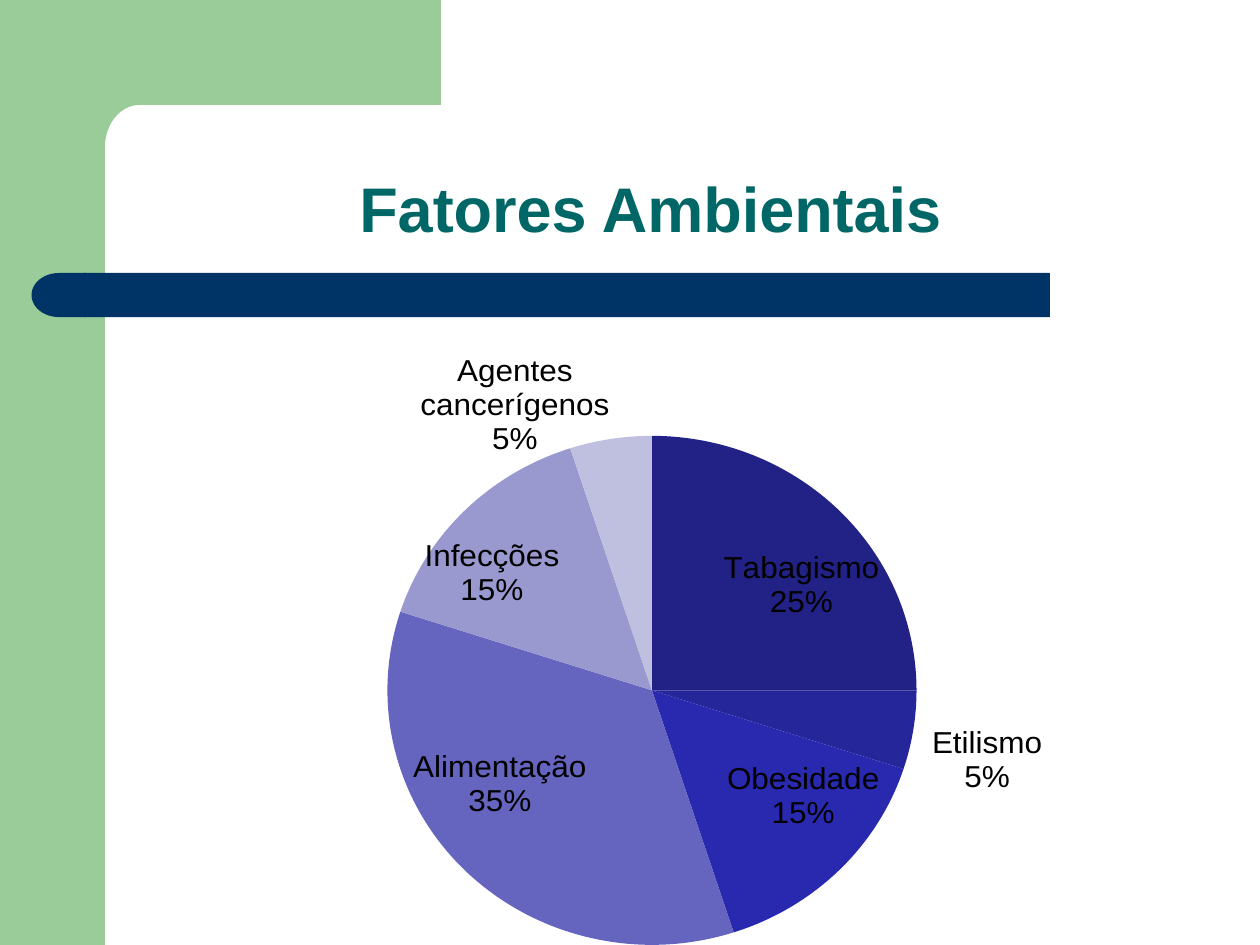
import math
from dataclasses import dataclass

from lxml import etree
from pptx import Presentation
from pptx import util as u
from pptx.chart import data as chart_data
from pptx.dml.color import RGBColor
from pptx.enum import chart as charts, shapes, text
from pptx.oxml import ns, parse_xml

INSIDE = charts.XL_LABEL_POSITION.INSIDE_END
OUTSIDE = charts.XL_LABEL_POSITION.OUTSIDE_END


@dataclass(frozen=True)
class Theme:
    font: str = "Arial"
    title_size: int = 36
    label_size: int = 18
    title: str = "006666"
    label: str = "000000"
    frame: str = "99CC99"
    bar: str = "003366"
    slices: tuple = ("222286", "26269B", "2929B0", "6565C0", "9999D0", "BFBFDF")


@dataclass(frozen=True)
class Factor:
    name: str
    share: int
    label_position: object
    label_shift: tuple


class SlideBuilder:
    COLUMNS, ROWS = 120, 90

    def __init__(self, deck, theme):
        self.deck, self.theme = deck, theme
        self.slide = deck.slides.add_slide(deck.slide_layouts[5])

    def point(self, column, row):
        return (round(self.deck.slide_width * column / self.COLUMNS),
                round(self.deck.slide_height * row / self.ROWS))

    def box(self, column, row, columns, rows):
        return (*self.point(column, row), *self.point(columns, rows))

    def paint(self, shape, color):
        shape.shadow.inherit = False
        shape.fill.solid()
        shape.fill.fore_color.rgb = RGBColor.from_string(color)
        shape.line.fill.background()

    def block(self, kind, area, color, rotation=0):
        shape = self.slide.shapes.add_shape(kind, *self.box(*area))
        shape.rotation = rotation
        self.paint(shape, color)

    def outline(self, corners, color):
        start, *rest = [self.point(*corner) for corner in corners]
        builder = self.slide.shapes.build_freeform(*start)
        builder.add_line_segments(rest)
        self.paint(builder.convert_to_shape(), color)

    def font(self, font, size, color, bold=False):
        font.name = self.theme.font
        font.size = u.Pt(size)
        font.bold = bold
        font.color.rgb = RGBColor.from_string(color)

    def title(self, wording, area):
        heading = self.slide.shapes.title
        heading.left, heading.top, heading.width, heading.height = self.box(*area)
        frame = heading.text_frame
        frame.vertical_anchor = text.MSO_ANCHOR.BOTTOM
        paragraph = frame.paragraphs[0]
        paragraph.alignment = text.PP_ALIGN.CENTER
        paragraph.line_spacing = 0.9
        run = paragraph.add_run()
        run.text = wording
        self.font(run.font, self.theme.title_size, self.theme.title, bold=True)

    def pie(self, factors, area, plot_area):
        data = chart_data.CategoryChartData()
        data.categories = [factor.name for factor in factors]
        data.add_series("Series 1", [factor.share for factor in factors])
        chart = self.slide.shapes.add_chart(
            charts.XL_CHART_TYPE.PIE, *self.box(*area), data).chart
        chart.has_legend = chart.has_title = False
        self.font(chart.font, self.theme.label_size, self.theme.label)
        plot = chart.plots[0]
        plot.vary_by_categories = True
        series = plot.series[0]

        series.data_labels.number_format = "0%"
        series.data_labels.number_format_is_linked = False
        for index, (factor, color) in enumerate(zip(factors, self.theme.slices)):
            slice_ = series.points[index]
            slice_.format.fill.solid()
            slice_.format.fill.fore_color.rgb = RGBColor.from_string(color)
            slice_.format.line.fill.background()
            label = slice_.data_label
            self.font(label.font, self.theme.label_size, self.theme.label)
            label.position = factor.label_position
        self.show_name_and_percent(series)
        for label, factor in zip(series._element.iter(ns.qn("c:dLbl")), factors):
            label.find(ns.qn("c:idx")).addnext(self.layout("", "xy", factor.label_shift))
        holder = chart._chartSpace.find(".//" + ns.qn("c:plotArea"))
        for automatic in holder.findall(ns.qn("c:layout")):
            holder.remove(automatic)
        edges = '<c:layoutTarget val="inner"/><c:xMode val="edge"/><c:yMode val="edge"/>'
        holder.insert(0, self.layout(edges, "xywh", plot_area))

    def show_name_and_percent(self, series):
        flags = {"c:showVal": "0", "c:showCatName": "1", "c:showPercent": "1"}
        for last_flag in list(series._element.iter(ns.qn("c:showBubbleSize"))):
            for tag, value in flags.items():
                last_flag.getparent().find(ns.qn(tag)).set("val", value)
            separator = etree.Element(ns.qn("c:separator"))
            separator.text = "\n"
            last_flag.addnext(separator)
        for leader_lines in series._element.iter(ns.qn("c:showLeaderLines")):
            leader_lines.set("val", "0")

    def layout(self, modes, keys, values):
        sizes = "".join(f'<c:{key} val="{value}"/>' for key, value in zip(keys, values))
        return parse_xml(f'<c:layout {ns.nsdecls("c")}><c:manualLayout>'
                         f'{modes}{sizes}</c:manualLayout></c:layout>')


def main():
    deck = Presentation()
    deck.slide_width, deck.slide_height = u.Inches(10), u.Inches(7.5)
    theme = Theme()
    page = SlideBuilder(deck, theme)

    inner_corner = [(13.3 - 3.3 * math.sin(turn), 14 - 4 * math.cos(turn))
                    for turn in (math.radians(step) for step in range(0, 91, 6))]
    page.block(shapes.MSO_SHAPE.RECTANGLE, (0, 0, 10, 90), theme.frame)
    page.outline([(42, 0), (42, 10), *inner_corner, (10, 15.4), (6, 15.4), (6, 0)],
                 theme.frame)
    page.block(shapes.MSO_SHAPE.RECTANGLE, (8, 26, 92, 4.2), theme.bar)
    page.block(shapes.MSO_SHAPE.FLOWCHART_DELAY, (3, 26, 5.2, 4.2), theme.bar, 180)

    page.title("Fatores Ambientais", (10.9, 9.8, 102.1, 14.2))
    page.pie(
        [Factor("Tabagismo", 25, INSIDE, (0.04, 0.06)),
         Factor("Etilismo", 5, OUTSIDE, (0.01, -0.01)),
         Factor("Obesidade", 15, INSIDE, (0.04, -0.06)),
         Factor("Alimentação", 35, INSIDE, (-0.05, -0.08)),
         Factor("Infecções", 15, INSIDE, (-0.04, 0.04)),
         Factor("Agentes cancerígenos", 5, OUTSIDE, (0, 0.04))],
        area=(3.4, 31.4, 108.7, 58.6),
        plot_area=(0.08, 0.14, 0.92, 0.86))
    deck.save("out.pptx")


if __name__ == "__main__":
    main()
